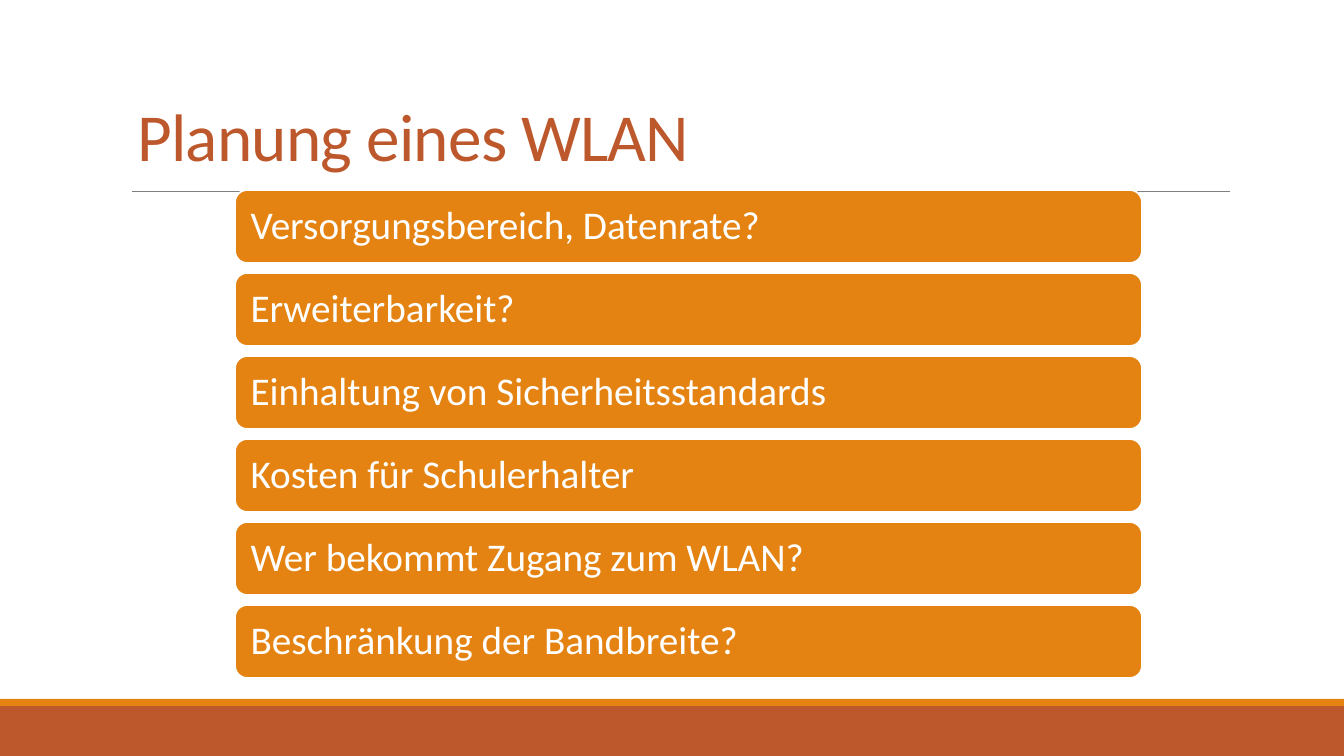
from lxml import etree
from pptx import Presentation
from pptx.dml.color import RGBColor
from pptx.enum.shapes import MSO_CONNECTOR, MSO_SHAPE
from pptx.enum.text import MSO_ANCHOR, MSO_AUTO_SIZE, PP_ALIGN
from pptx.oxml.ns import qn
from pptx.util import Emu, Pt

EMU_PER_PX = 914400 / 100.8
RUST, ORANGE, GREY, WHITE = "BD582C", "E48312", "808080", "FFFFFF"
QUESTIONS = [
    "Versorgungsbereich, Datenrate?",
    "Erweiterbarkeit?",
    "Einhaltung von Sicherheitsstandards",
    "Kosten für Schulerhalter",
    "Wer bekommt Zugang zum WLAN?",
    "Beschränkung der Bandbreite?",
]


def px(length):
    return Emu(round(length * EMU_PER_PX))


def rgb(value):
    return RGBColor.from_string(value)


def apply(target, values):
    for attribute, value in values.items():
        setattr(target, attribute, value)


def write(frame, text, size, color, spacing, **frame_format):
    apply(frame, {"word_wrap": True, "auto_size": MSO_AUTO_SIZE.NONE, **frame_format})
    paragraph = frame.paragraphs[0]
    apply(paragraph, {"alignment": PP_ALIGN.LEFT, "line_spacing": spacing})
    run = paragraph.add_run()
    run.text = text
    apply(run.font, {"name": "Calibri", "size": Pt(size)})
    run.font.color.rgb = rgb(color)
    return run


def add_block(slide, kind, box, fill):
    block = slide.shapes.add_shape(kind, *map(px, box))
    block.shadow.inherit = False
    block.fill.solid()
    block.fill.fore_color.rgb = rgb(fill)
    block.line.fill.background()
    return block


def add_footer(slide, box):
    left, top, width, height = box
    stripe_height = 7
    add_block(slide, MSO_SHAPE.RECTANGLE,
              (left, top + stripe_height, width, height - stripe_height), RUST)
    add_block(slide, MSO_SHAPE.RECTANGLE, (left, top, width, stripe_height), ORANGE)


def add_heading(slide, box):
    left, top, width, height = box
    title = slide.shapes.title
    apply(title, dict(zip(("left", "top", "width", "height"), map(px, box))))
    heading = write(title.text_frame, "Planung eines WLAN", 48, RUST, 0.85,
                    vertical_anchor=MSO_ANCHOR.BOTTOM)
    heading.font._element.set("spc", "-50")

    rule_left, rule_y = left + 5, top + height + 11
    rule = slide.shapes.add_connector(
        MSO_CONNECTOR.STRAIGHT, px(rule_left), px(rule_y),
        px(rule_left + width - 11), px(rule_y))
    rule.line.color.rgb = rgb(GREY)
    rule.line.width = Pt(0.5)
    etree.SubElement(rule._element.spPr, qn("a:effectLst"))


def add_questions(slide, box):
    left, top, width, height = box
    bar_height = 73
    step = (height - bar_height) / (len(QUESTIONS) - 1)
    for index, question in enumerate(QUESTIONS):
        bar = add_block(slide, MSO_SHAPE.ROUNDED_RECTANGLE,
                        (left, top + index * step, width, bar_height), ORANGE)
        bar.line.color.rgb = rgb(WHITE)
        bar.line.width = Pt(1.25)
        write(bar.text_frame, question, 28, WHITE, 0.9,
              vertical_anchor=MSO_ANCHOR.MIDDLE,
              margin_left=px(12), margin_right=px(12),
              margin_top=px(12), margin_bottom=px(12))


def main():
    presentation = Presentation()
    apply(presentation, {"slide_width": px(1344), "slide_height": px(756)})
    slide = presentation.slides.add_slide(presentation.slide_layouts[5])
    add_footer(slide, (0, 699, 1344, 57))
    add_heading(slide, (127, 34, 1109, 146))
    add_questions(slide, (235, 190, 907, 488))
    presentation.save("out.pptx")


if __name__ == "__main__":
    main()
